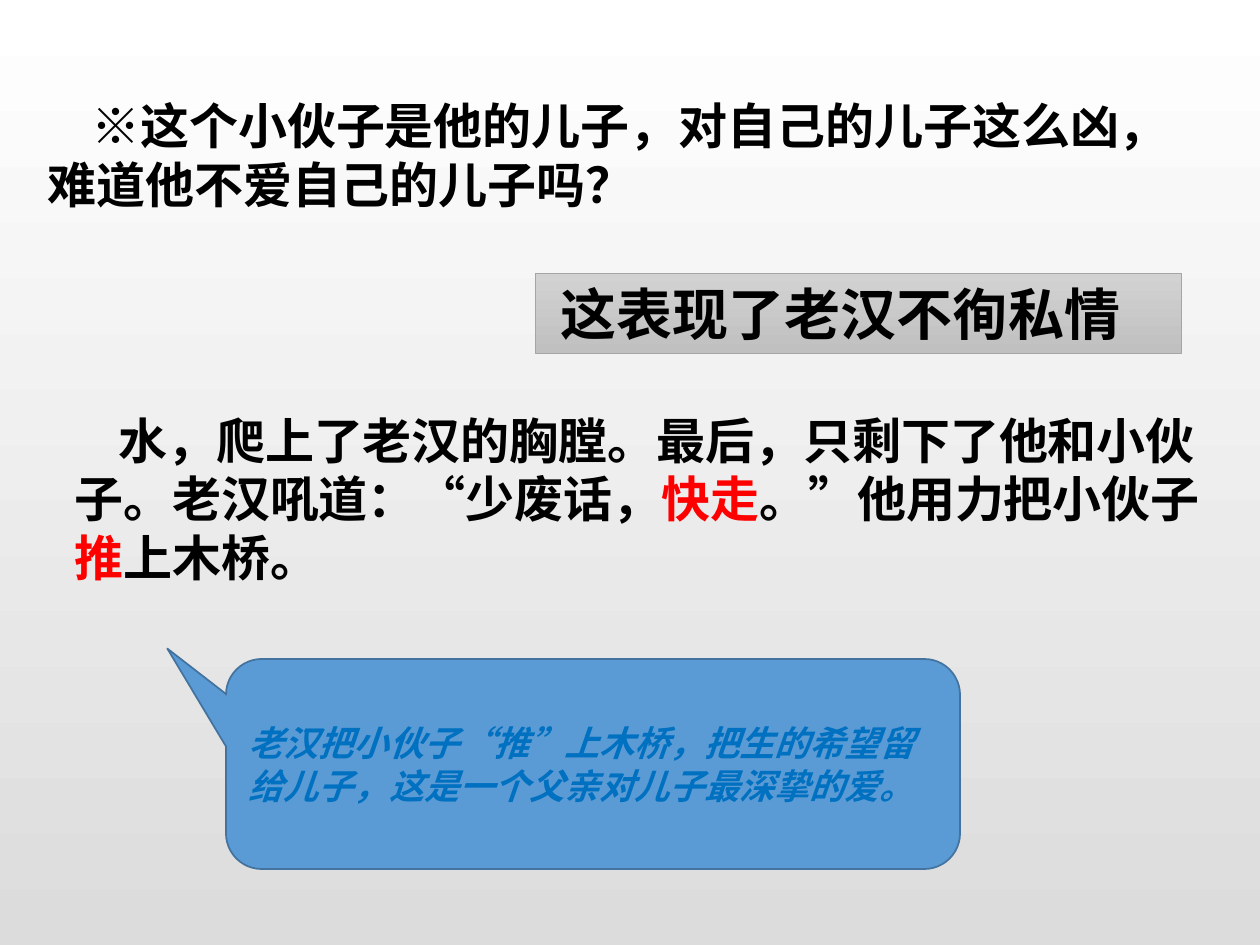
from lxml.etree import SubElement
from pptx import Presentation
from pptx.dml.color import RGBColor
from pptx.enum.shapes import MSO_SHAPE
from pptx.enum.text import MSO_ANCHOR, PP_ALIGN
from pptx.oxml.ns import qn
from pptx.util import Emu, Pt

FONT = "Noto Sans CJK SC"
BLACK = RGBColor(0x00, 0x00, 0x00)
RED = RGBColor(0xFF, 0x00, 0x00)
WHITE = RGBColor(0xFF, 0xFF, 0xFF)
PALE_GRAY = RGBColor(0xDC, 0xDC, 0xDC)
LIGHT_GRAY = RGBColor(0xD2, 0xD2, 0xD2)
MID_GRAY = RGBColor(0xC0, 0xC0, 0xC0)
LINE_GRAY = RGBColor(0xA5, 0xA5, 0xA5)
BLUE = RGBColor(0x5B, 0x9B, 0xD5)
DARK_BLUE = RGBColor(0x43, 0x73, 0x9E)
TEXT_BLUE = RGBColor(0x00, 0x70, 0xC0)


def px(n):
    return Emu(round(n * 914400 / 126))


def set_gradient(fill, top, bottom):
    fill.gradient()
    fill.gradient_angle = 270
    for stop, color, position in zip(fill.gradient_stops, (top, bottom), (0, 1)):
        stop.color.rgb = color
        stop.position = position


def write_text(sp, runs, size, indent=0, italic=False):
    tf = sp.text_frame
    tf.word_wrap = True
    p = tf.paragraphs[0]
    p.alignment = PP_ALIGN.LEFT
    pPr = p._p.get_or_add_pPr()
    pPr.set("marL", "0")
    pPr.set("indent", str(px(indent)))
    p.font.name = FONT
    p.font.size = Pt(size)
    p.font.bold = True
    p.font.italic = italic
    SubElement(pPr.find(qn("a:defRPr")), qn("a:ea"), typeface=FONT)
    for text, color in runs:
        r = p.add_run()
        r.text = text
        r.font.color.rgb = color


def add_text(s, box, runs, size, indent):
    sp = s.shapes.add_textbox(*map(px, box))
    write_text(sp, runs, size, indent)


def add_shape(s, kind, box, line_color, line_width):
    sp = s.shapes.add_shape(kind, *map(px, box))
    sp.shadow.inherit = False
    sp.line.color.rgb = line_color
    sp.line.width = Pt(line_width)
    return sp


def add_callout(s):
    sp = add_shape(s, MSO_SHAPE.ROUNDED_RECTANGULAR_CALLOUT,
                   (226, 659, 734, 210), DARK_BLUE, 1)
    for i, value in enumerate((-0.58, -0.55, 0.17)):
        sp.adjustments[i] = value
    sp.fill.solid()
    sp.fill.fore_color.rgb = BLUE
    sp.text_frame.vertical_anchor = MSO_ANCHOR.MIDDLE
    write_text(sp, [("老汉把小伙子“推”上木桥，把生的希望留给儿子，这是一个父亲对儿子最深挚的爱。",
                     TEXT_BLUE)], 20, italic=True)


def add_answer(s):
    sp = add_shape(s, MSO_SHAPE.RECTANGLE, (535, 273, 646, 80), LINE_GRAY, 0.5)
    set_gradient(sp.fill, LIGHT_GRAY, MID_GRAY)
    sp.text_frame.vertical_anchor = MSO_ANCHOR.TOP
    write_text(sp, [("这表现了老汉不徇私情", BLACK)], 32, indent=13)


def main():
    prs = Presentation()
    prs.slide_width, prs.slide_height = px(1260), px(945)
    s = prs.slides.add_slide(prs.slide_layouts[6])
    set_gradient(s.background.fill, WHITE, PALE_GRAY)
    add_callout(s)
    add_text(s, (35, 89, 1116, 131),
             [("※这个小伙子是他的儿子，对自己的儿子这么凶，难道他不爱自己的儿子吗？", BLACK)],
             28, 44)
    add_answer(s)
    add_text(s, (62, 404, 1172, 190),
             [("水，爬上了老汉的胸膛。最后，只剩下了他和小伙子。老汉吼道：“少废话，", BLACK),
              ("快走", RED),
              ("。”他用力把小伙子", BLACK),
              ("推", RED),
              ("上木桥。", BLACK)],
             28, 44)
    prs.save("out.pptx")


if __name__ == "__main__":
    main()
